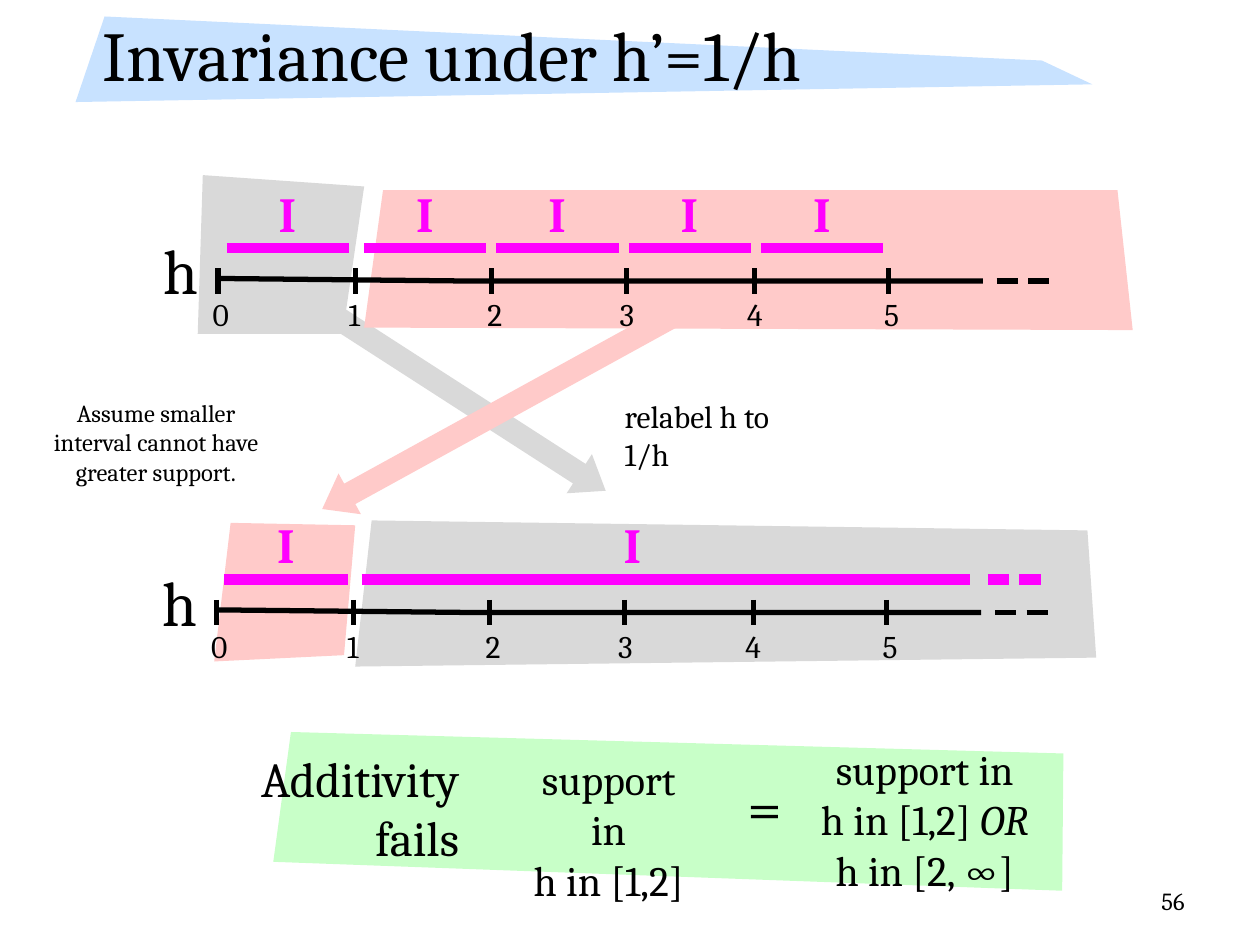
from lxml.etree import SubElement
from pptx import Presentation
from pptx.dml.color import RGBColor
from pptx.enum.shapes import MSO_CONNECTOR as Connector, MSO_SHAPE as Shape
from pptx.enum.text import MSO_ANCHOR as Anchor, PP_ALIGN as Align
from pptx.oxml.ns import qn
from pptx.util import Pt

BLACK, MAGENTA = "000000", "FF00FF"
GRAY, PINK, BLUE, GREEN = "D9D9D9", "FFCAC9", "C8E2FF", "C8FFC8"


def color(hex_value):
    return RGBColor.from_string(hex_value)


class Sketch:
    font_name = "Cambria"

    def __init__(self, slide):
        self.slide = slide

    def finish(self, shape, fill):
        shape.shadow.inherit = False
        shape.fill.solid()
        shape.fill.fore_color.rgb = color(fill)
        shape.line.fill.background()

    def outline(self, points, closed):
        start, *rest = [(Pt(x), Pt(y)) for x, y in points]
        builder = self.slide.shapes.build_freeform(*start, scale=1.0)
        builder.add_line_segments(rest, close=closed)
        return builder.convert_to_shape()

    def polygon(self, points, fill):
        self.finish(self.outline(points, True), fill)

    def curve(self, points, weight):
        shape = self.outline(points, False)
        shape.shadow.inherit = False
        shape.fill.background()
        shape.line.color.rgb = color(BLACK)
        shape.line.width = Pt(weight)

    def arrow(self, box, rotation, fill):
        shape = self.slide.shapes.add_shape(Shape.RIGHT_ARROW, *map(Pt, box))
        shape.adjustments[0], shape.adjustments[1] = 0.5, 0.675
        shape.rotation = rotation
        self.finish(shape, fill)

    def line(self, x1, y1, x2, y2, stroke=BLACK, weight=3):
        connector = self.slide.shapes.add_connector(
            Connector.STRAIGHT, Pt(x1), Pt(y1), Pt(x2), Pt(y2))
        connector.line.color.rgb = color(stroke)
        connector.line.width = Pt(weight)
        SubElement(connector._element.spPr, qn("a:effectLst"))

    def text(self, box, paragraphs, size, fill=BLACK, align=Align.LEFT,
             anchor=Anchor.TOP, wrap=True, **style):
        """Each paragraph is a list of (text, extra font values)."""
        if isinstance(paragraphs, str):
            paragraphs = [[(paragraphs, {})]]
        frame = self.slide.shapes.add_textbox(*map(Pt, box)).text_frame
        frame.word_wrap = wrap
        frame.vertical_anchor = anchor
        for index, runs in enumerate(paragraphs):
            paragraph = frame.add_paragraph() if index else frame.paragraphs[0]
            paragraph.alignment = align
            for words, extra in runs:
                run = paragraph.add_run()
                run.text = words
                run.font.color.rgb = color(fill)
                values = {"name": self.font_name, "size": Pt(size), **style, **extra}
                for name, value in values.items():
                    setattr(run.font, name, value)

    def axis(self, dx, dy):
        """Number line from 0 to 5 with a dashed end."""
        y = 160.6 + dy
        self.curve([(123.9 + dx, y - 1.5), (270 + dx, y), (561.6 + dx, y)], 3)
        ticks = (124.6, 203, 280.8, 357.8, 431.3, 507.6)
        labels = (114.5, 192.2, 271.4, 347, 419.8, 498.2)
        for number, (tick, label) in enumerate(zip(ticks, labels)):
            self.line(tick + dx, y - 7.2, tick + dx, y + 7.2)
            self.text((label + dx, y + 4.5, 23.8, 28.8), str(number), 18, wrap=False)
        self.text((86.4 + dx, y - 31.7, 32.4, 50.4), "h", 36, wrap=False)
        for x in (569.5, 587.5):
            self.line(x + dx, y, x + dx + 12.2, y)

    def interval(self, x1, x2, y, label_x):
        self.line(x1, y, x2, y, MAGENTA, 6)
        self.text((label_x, y - 40.5, 25.2, 40.8), "I", 28, MAGENTA,
                  wrap=False, bold=True)


def main():
    presentation = Presentation()
    presentation.slide_width, presentation.slide_height = Pt(720), Pt(540)
    slide = presentation.slides.add_slide(presentation.slide_layouts[6])
    sketch = Sketch(slide)

    # Swapped regions and the arrows between them
    sketch.polygon([(115.9, 100.1), (208.1, 106.6), (195.8, 190.8), (113, 190.8)], GRAY)
    sketch.polygon([(212.4, 297.4), (621.4, 303.1), (626.4, 375.8), (203, 380.9)], GRAY)
    sketch.arrow((169.9, 215.3, 191.5, 26.6), 32.8, GRAY)
    sketch.text((349.9, 223.2, 115, 50), "relabel h to 1/h", 18)
    sketch.polygon([(131.8, 298.8), (122.4, 378), (196.6, 374.4), (203, 300.2)], PINK)
    sketch.polygon([(218.9, 108.7), (208.1, 187.2), (647.3, 188.6), (638.6, 108.7)], PINK)
    sketch.arrow((169.2, 219.6, 240.5, 26.6), 151.2, PINK)

    # Page number and title
    sketch.text((516.2, 500.4, 167.8, 28.8), "56", 14,
                align=Align.RIGHT, anchor=Anchor.MIDDLE)
    sketch.polygon([(59.8, 9.4), (595.4, 34.6), (624.2, 48.2), (43.2, 58.3)], BLUE)
    sketch.text((51.8, 6.5, 631.4, 48.2), "Invariance under h’=1/h", 40,
                anchor=Anchor.MIDDLE)

    # Lower number line
    sketch.axis(-0.9, 189.4)
    sketch.interval(206.6, 554.4, 331.2, 349.2)
    for x in (564.5, 582.5):
        sketch.line(x, 331.2, x + 12.2, 331.2, MAGENTA, 6)
    sketch.interval(128.2, 198.7, 331.2, 151.2)
    sketch.text((19.4, 223.9, 139.7, 58.3),
                "Assume smaller interval cannot have greater support.", 14,
                align=Align.CENTER)

    # Upper number line with equal intervals
    sketch.axis(0, 0)
    for x in [129.6] + [208.1 + 75.6 * step for step in range(4)]:
        sketch.interval(x, x + 69.8, 141.8, x + 22.6)

    # Conclusion
    sketch.polygon([(166.3, 418.3), (607.7, 430.6), (607, 509), (156.2, 492.5)], GREEN)
    sketch.text((455, 421.2, 146.9, 94.3),
                [[("support in", {})],
                 [("h in [1,2] ", {}), ("OR", {"italic": True})],
                 [("h in [2, ∞]", {})]], 24, align=Align.CENTER)
    sketch.text((293.8, 427, 108, 94.3),
                [[("support in", {})], [("h in [1,2]", {})]], 24, align=Align.CENTER)
    sketch.text((124.6, 424.1, 144.7, 74.9), "Additivity fails", 28, align=Align.RIGHT)
    sketch.text((419.8, 434.9, 35.3, 51.1), "=", 36, wrap=False)

    presentation.save("out.pptx")


if __name__ == "__main__":
    main()
